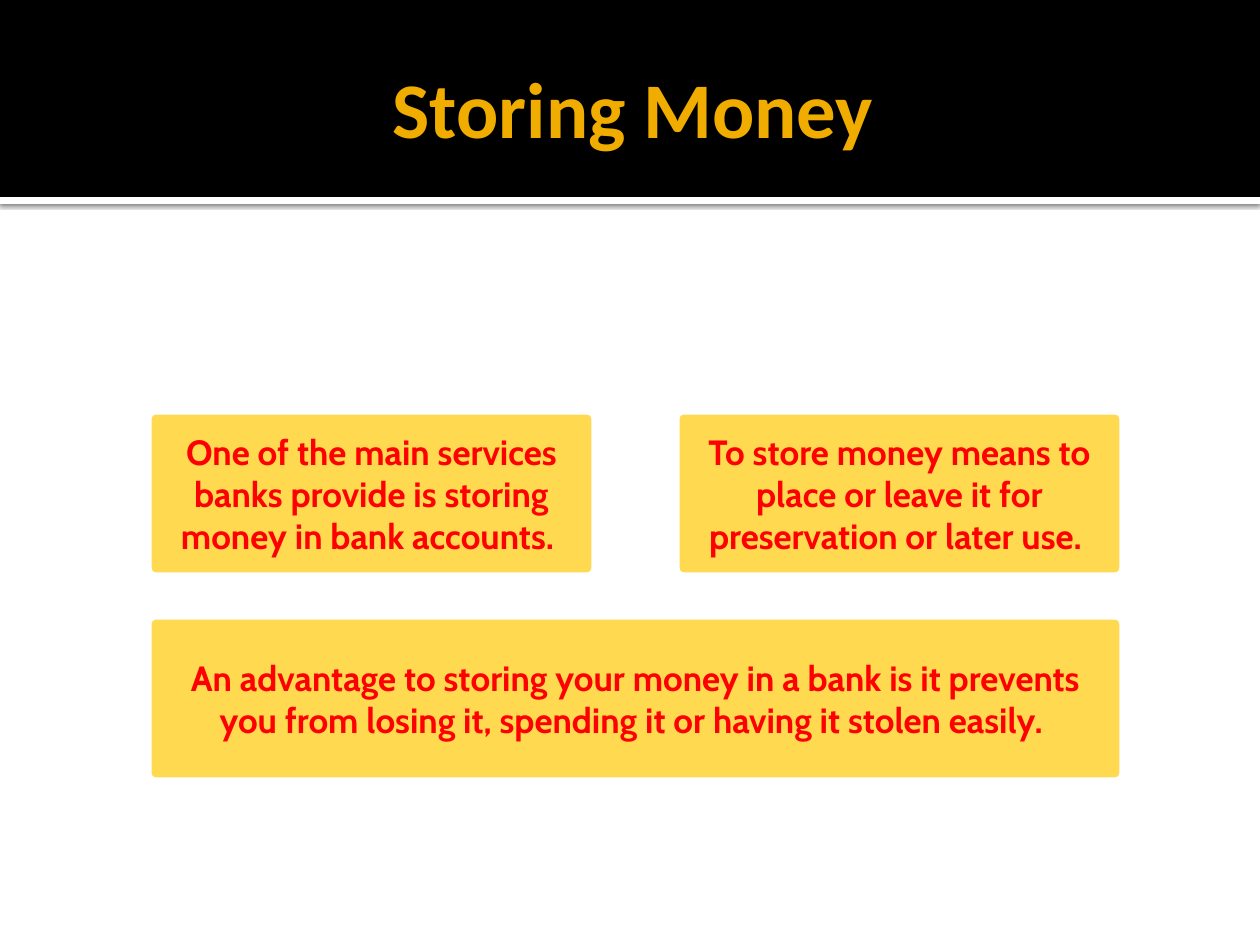
from lxml import etree
from pptx import Presentation
from pptx.dml.color import RGBColor
from pptx.enum.shapes import MSO_SHAPE
from pptx.enum.text import MSO_ANCHOR, PP_ALIGN
from pptx.oxml.ns import qn
from pptx.util import Emu, Pt

RECTANGLE = MSO_SHAPE.RECTANGLE
ROUNDED = MSO_SHAPE.ROUNDED_RECTANGLE
MIDDLE = MSO_ANCHOR.MIDDLE
CENTER = PP_ALIGN.CENTER

TITLE = "Storing Money"
CARDS = [
    (0, 0, 1, "One of the main services banks provide is storing money in bank accounts. "),
    (0, 1, 1, "To store money means to place or leave it for preservation or later use. "),
    (1, 0, 2, "An advantage to storing your money in a bank is it prevents you from "
              "losing it, spending it or having it stolen easily. "),
]
COLORS = {"header": "000000", "white": "FFFFFF", "title": "F0AD00",
          "card": "FFD94F", "text": "FF0000", "shadow": "000000"}

PAGE_WIDTH, PAGE_HEIGHT = 1260, 945
HEADER_HEIGHT, STRIP_HEIGHT = 197, 7
CARD_LEFT, CARD_TOP = 149, 412
CARD_WIDTH, CARD_HEIGHT = 445, 163
COLUMN_STEP, ROW_STEP = 528, 205


def px(length):
    return Emu(round(length * 914400 / 126))


def color(name):
    return RGBColor.from_string(COLORS[name])


def add_shape(page, kind, bounds, fill):
    shape = page.shapes.add_shape(kind, *map(px, bounds))
    shape.shadow.inherit = False
    shape.fill.solid()
    shape.fill.fore_color.rgb = color(fill)
    shape.line.fill.background()
    return shape


def add_shadow(shape):
    effects = shape._element.spPr.find(qn("a:effectLst"))
    shadow = etree.SubElement(effects, qn("a:outerShdw"), blurRad=str(Pt(2.5)),
                              dist=str(Pt(0.8)), dir="5400000", rotWithShape="0")
    tint = etree.SubElement(shadow, qn("a:srgbClr"), val=COLORS["shadow"])
    etree.SubElement(tint, qn("a:alpha"), val="60000")


def write(shape, text, font_name, size, font_color):
    frame = shape.text_frame
    frame.text = text
    frame.word_wrap = True
    frame.vertical_anchor = MIDDLE
    para = frame.paragraphs[0]
    para.alignment = CENTER
    font = para.runs[0].font
    font.name, font.size, font.bold = font_name, Pt(size), True
    font.color.rgb = color(font_color)


def main():
    deck = Presentation()
    deck.slide_width, deck.slide_height = px(PAGE_WIDTH), px(PAGE_HEIGHT)
    page = deck.slides.add_slide(deck.slide_layouts[6])

    strip = add_shape(page, RECTANGLE, (0, HEADER_HEIGHT, PAGE_WIDTH, STRIP_HEIGHT), "white")
    add_shadow(strip)
    add_shape(page, RECTANGLE, (0, 0, PAGE_WIDTH, HEADER_HEIGHT), "header")

    title = page.shapes.add_textbox(px(63), px(21), px(1134), px(173))
    write(title, TITLE, "Calibri", 45, "title")
    title.text_frame.margin_right = Pt(3.6)

    for row, column, columns, text in CARDS:
        bounds = (CARD_LEFT + column * COLUMN_STEP, CARD_TOP + row * ROW_STEP,
                  CARD_WIDTH + (columns - 1) * COLUMN_STEP, CARD_HEIGHT)
        card = add_shape(page, ROUNDED, bounds, "card")
        card.adjustments[0] = 0.04
        card.line.color.rgb = color("white")
        card.line.width = Pt(3)
        write(card, text, "Cabin", 20, "text")

    deck.save("out.pptx")


if __name__ == "__main__":
    main()
